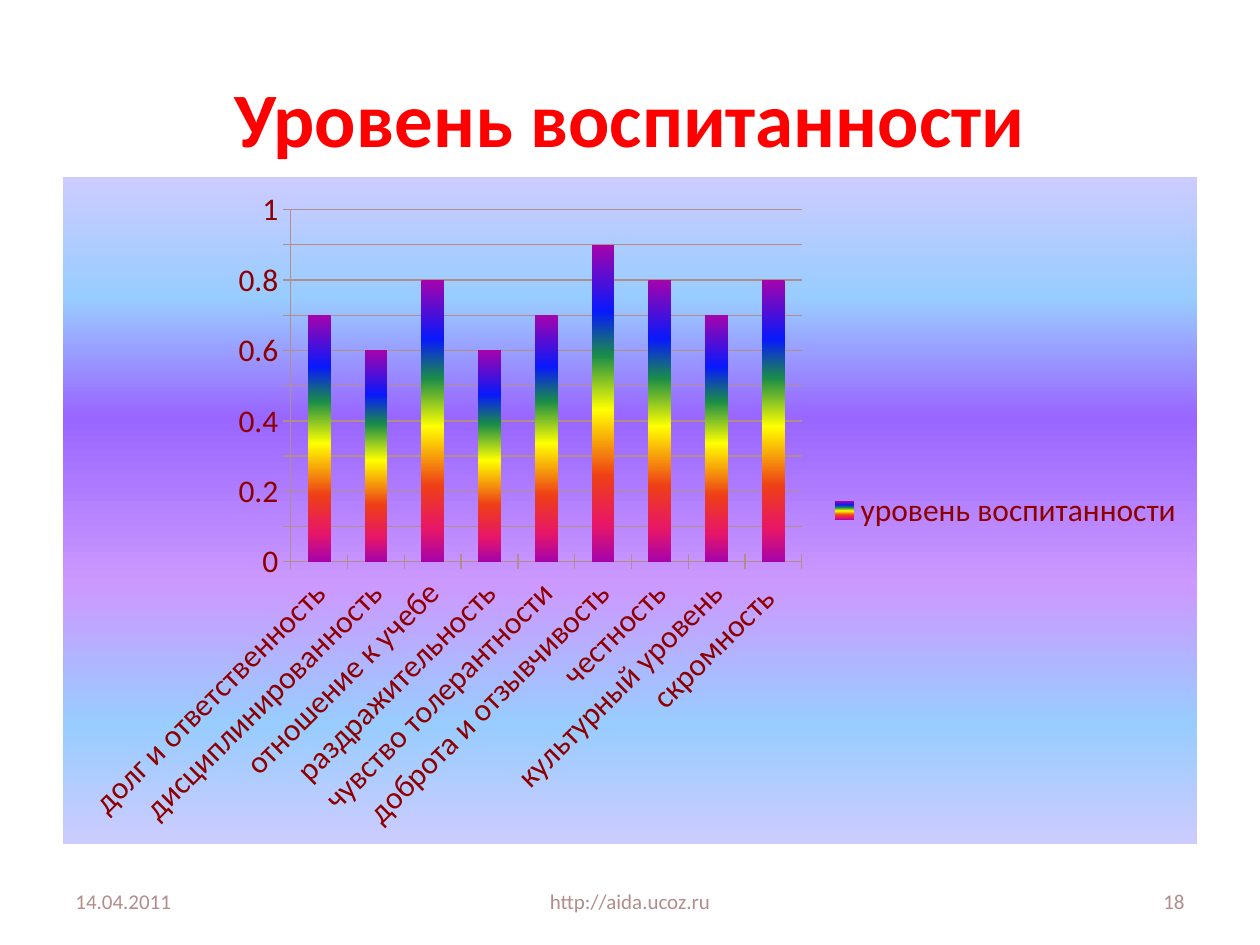
from typing import NamedTuple

from pptx import Presentation
from pptx.chart.data import CategoryChartData
from pptx.dml.color import RGBColor
from pptx.enum.chart import XL_CHART_TYPE, XL_LEGEND_POSITION, XL_TICK_MARK
from pptx.enum.text import MSO_ANCHOR, PP_ALIGN
from pptx.oxml import parse_xml
from pptx.oxml.ns import nsdecls, qn
from pptx.util import Inches, Pt

WIDE, HIGH = Inches(10), Inches(7.5)
COLS, ROWS = 120, 90  # slide grid
FACE = "Calibri"
HUES = {"title": "FF0000", "chart": "8E0000", "foot": "B38C8C", "line": "B38C8C"}

# Gradient stops, top to bottom: percent and colour
SKY = [(0, "CCCCFF"), (18, "99CCFF"), (36, "9966FF"),
       (61, "CC99FF"), (82, "99CCFF"), (100, "CCCCFF")]
RAINBOW = [(0, "A603AB"), (21, "0819FB"), (35, "1A8D48"), (52, "FFFF00"),
           (73, "EE3F17"), (88, "E81766"), (100, "A603AB")]

SCORES = {
    "долг и ответственность": 0.7,
    "дисциплинированность": 0.6,
    "отношение к учебе": 0.8,
    "раздражительность": 0.6,
    "чувство толерантности": 0.7,
    "доброта и отзывчивость": 0.9,
    "честность": 0.8,
    "культурный уровень": 0.7,
    "скромность ": 0.8,
}


class Box(NamedTuple):
    """Place in columns and rows of the grid."""
    x: float
    y: float
    w: float
    h: float

    def spot(self) -> tuple:
        col, row = WIDE / COLS, HIGH / ROWS
        return (round(self.x * col), round(self.y * row),
                round(self.w * col), round(self.h * row))


class Label(NamedTuple):
    text: str
    box: Box
    hue: str
    size: int
    align: PP_ALIGN
    bold: bool = False


FOOT = {"y": 83.4, "h": 4.8}
LABELS = [
    Label("Уровень воспитанности", Box(6, 3.6, 108, 15),
          "title", 44, PP_ALIGN.CENTER, True),
    Label("14.04.2011", Box(x=6, w=28, **FOOT), "foot", 12, PP_ALIGN.LEFT),
    Label("http://aida.ucoz.ru", Box(x=41, w=38, **FOOT), "foot", 12, PP_ALIGN.CENTER),
    Label("18", Box(x=86, w=28, **FOOT), "foot", 12, PP_ALIGN.RIGHT),
]
GRAPH = Box(6, 16.88, 108, 63.5)


def put(item, values: dict) -> None:
    for name, value in values.items():
        setattr(item, name, value)


def style(font, hue: str, size: int, bold: bool = False) -> None:
    put(font, {"name": FACE, "size": Pt(size), "bold": bold})
    font.color.rgb = RGBColor.from_string(HUES[hue])


def blend(stops: list):
    """Make a vertical gradient fill."""
    marks = "".join(f'<a:gs pos="{at * 1000}"><a:srgbClr val="{hue}"/></a:gs>'
                    for at, hue in stops)
    return parse_xml(f'<a:gradFill {nsdecls("a")} rotWithShape="1"><a:gsLst>{marks}</a:gsLst>'
                     '<a:lin ang="5400000" scaled="0"/></a:gradFill>')


def write(slide, label: Label) -> None:
    frame = slide.shapes.add_textbox(*label.box.spot()).text_frame
    put(frame, {"word_wrap": True, "vertical_anchor": MSO_ANCHOR.MIDDLE})
    para = frame.paragraphs[0]
    put(para, {"text": label.text, "alignment": label.align})
    style(para.font, label.hue, label.size, label.bold)


def graph(slide) -> None:
    data = CategoryChartData()
    data.categories = list(SCORES)
    data.add_series("уровень воспитанности", list(SCORES.values()))
    chart = slide.shapes.add_chart(XL_CHART_TYPE.COLUMN_STACKED, *GRAPH.spot(), data).chart
    put(chart, {"has_title": False, "has_legend": True})
    put(chart.legend, {"position": XL_LEGEND_POSITION.RIGHT, "include_in_layout": False})
    style(chart.font, "chart", 18)

    # Bars and chart background
    plot = chart.plots[0]
    put(plot, {"gap_width": 150, "overlap": 100, "vary_by_categories": False})
    plot.series[0]._element.get_or_add_spPr().append(blend(RAINBOW))
    back = parse_xml(f'<c:spPr {nsdecls("c", "a")}><a:ln><a:noFill/></a:ln></c:spPr>')
    back.insert(0, blend(SKY))
    chart._chartSpace.chart.addnext(back)

    # Axes and grid
    rows, cats = chart.value_axis, chart.category_axis
    put(rows, {"minimum_scale": 0, "maximum_scale": 1, "major_unit": 0.1,
               "has_major_gridlines": True})
    put(rows.tick_labels, {"number_format": "General", "number_format_is_linked": False})
    for axis in (rows, cats):
        put(axis, {"major_tick_mark": XL_TICK_MARK.CROSS})
        style(axis.tick_labels.font, "chart", 18)
    for part in (rows, cats, rows.major_gridlines):
        part.format.line.width = Pt(0.75)
        part.format.line.color.rgb = RGBColor.from_string(HUES["line"])
    cats._element.find(qn("c:txPr")).find(qn("a:bodyPr")).set("rot", "-2700000")


def main() -> None:
    deck = Presentation()
    put(deck, {"slide_width": WIDE, "slide_height": HIGH})
    slide = deck.slides.add_slide(deck.slide_layouts[6])
    graph(slide)
    for label in LABELS:
        write(slide, label)
    deck.save("out.pptx")


if __name__ == "__main__":
    main()
